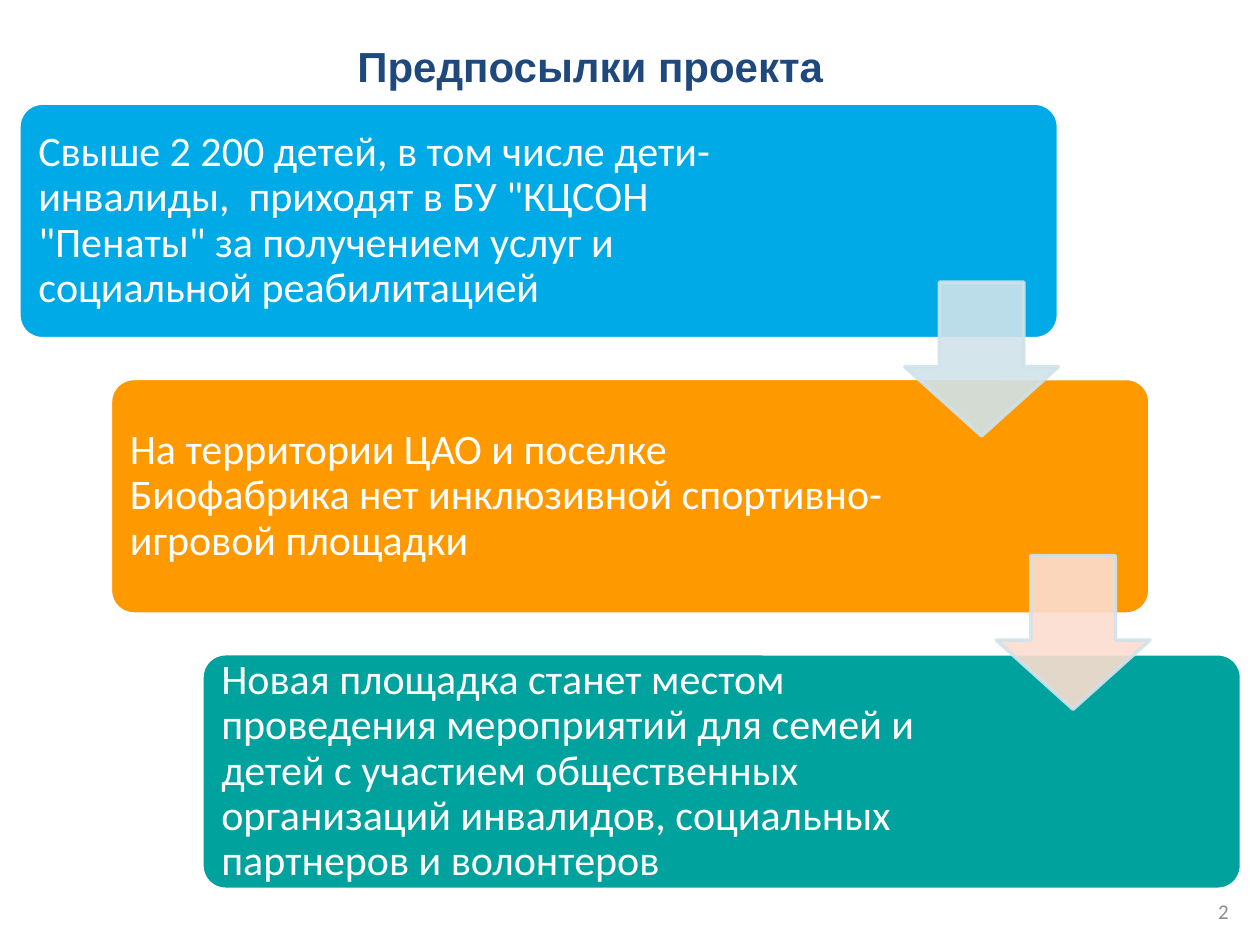
from lxml.etree import SubElement
from pptx import Presentation
from pptx.dml.color import RGBColor
from pptx.enum.shapes import MSO_SHAPE as Shape
from pptx.enum.text import MSO_ANCHOR as Anchor, PP_ALIGN as Align
from pptx.oxml.ns import qn
from pptx.util import Pt

COLORS = {
    "title": "1F497D", "number": "8C8C8C", "white": "FFFFFF",
    "blue": "00AAE6", "orange": "FF9900", "teal": "00A29E",
    "ice": "D0E3EA", "peach": "FCDDCF",
}
STEPS = [
    ("blue", 'Свыше 2 200 детей, в том числе дети- инвалиды,  приходят в БУ "КЦСОН '
             '"Пенаты" за получением услуг и социальной реабилитацией'),
    ("orange", "На территории ЦАО и поселке Биофабрика нет инклюзивной "
               "спортивно-игровой площадки"),
    ("teal", "Новая площадка станет местом проведения мероприятий для семей и детей "
             "с участием общественных организаций инвалидов, социальных партнеров "
             "и волонтеров"),
]
ARROWS = ["ice", "peach"]
STEP_X = 52.3
CARD_LEFT, CARD_TOP, CARD_STEP_Y = 10.8, 59, 157.3
CARD_WIDTH, CARD_HEIGHT = 594, 134.6
TEXT_GAP, TEXT_WIDTH = 4, 447
ARROW_LEFT, ARROW_TOP, ARROW_STEP_Y, ARROW_SIZE = 517, 161.3, 156.2, 87.8


def rgb(name):
    """Return the named colour."""
    return RGBColor.from_string(COLORS[name])


def add_text(page, area, text, size, color, font="Calibri", align=Align.LEFT,
             bold=False, spacing=1.0):
    """Add a wrapped, vertically centred text box."""
    box = page.shapes.add_textbox(*map(Pt, area))
    frame = box.text_frame
    frame.word_wrap = True
    frame.vertical_anchor = Anchor.MIDDLE
    para = frame.paragraphs[0]
    para.text = text
    para.alignment = align
    para.line_spacing = spacing
    para.font.name = font
    para.font.size = Pt(size)
    para.font.bold = bold
    para.font.color.rgb = rgb(color)
    return frame


def add_block(page, kind, area, fill, line, adjustments):
    """Add a filled preset shape with a two-point outline."""
    block = page.shapes.add_shape(kind, *map(Pt, area))
    block.shadow.inherit = False
    block.fill.solid()
    block.fill.fore_color.rgb = rgb(fill)
    block.line.color.rgb = rgb(line)
    block.line.width = Pt(2)
    for index, value in enumerate(adjustments):
        block.adjustments[index] = value
    return block


def add_card(page, index, fill, text):
    """Add one step of the staircase with its text."""
    left = CARD_LEFT + index * STEP_X
    top = CARD_TOP + index * CARD_STEP_Y
    add_block(page, Shape.ROUNDED_RECTANGLE, (left, top, CARD_WIDTH, CARD_HEIGHT),
              fill, "white", [0.1])
    area = (left + TEXT_GAP, top + TEXT_GAP, TEXT_WIDTH, CARD_HEIGHT - 2 * TEXT_GAP)
    frame = add_text(page, area, text, 24, "white", spacing=0.9)
    frame.margin_left = frame.margin_right = Pt(7.2)
    frame.margin_top = frame.margin_bottom = Pt(7.2)


def add_arrow(page, index, fill):
    """Add a translucent arrow leading to the next step."""
    area = (ARROW_LEFT + index * STEP_X, ARROW_TOP + index * ARROW_STEP_Y,
            ARROW_SIZE, ARROW_SIZE)
    arrow = add_block(page, Shape.DOWN_ARROW, area, fill, "ice", [0.55, 0.45])
    for color in arrow.element.spPr.iter(qn("a:srgbClr")):
        SubElement(color, qn("a:alpha"), val="90000")


def main():
    """Build the slide and save it."""
    deck = Presentation()
    deck.slide_width, deck.slide_height = Pt(720), Pt(540)
    page = deck.slides.add_slide(deck.slide_layouts[6])
    add_text(page, (10.8, 16.6, 653, 41.8), "Предпосылки проекта", 24, "title",
             font="Arial", align=Align.CENTER, bold=True)
    add_text(page, (541.4, 506.2, 167.8, 28.8), "2", 12, "number", align=Align.RIGHT)
    for index, (fill, text) in enumerate(STEPS):
        add_card(page, index, fill, text)
    for index, fill in enumerate(ARROWS):
        add_arrow(page, index, fill)
    deck.save("out.pptx")


if __name__ == "__main__":
    main()
